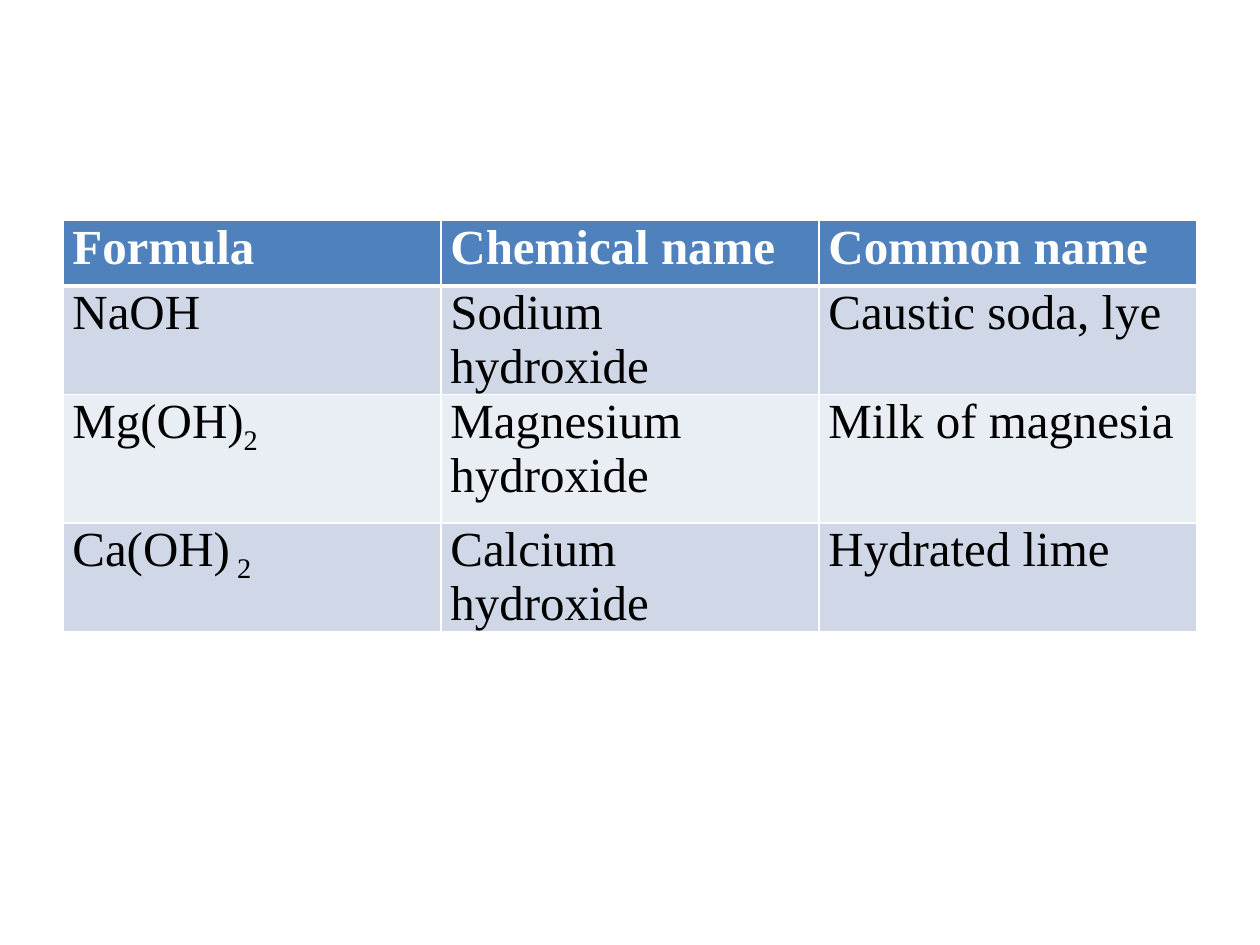
from lxml.etree import SubElement as Sub
from pptx import Presentation
from pptx.dml.color import RGBColor as RGB
from pptx.oxml.ns import qn
from pptx.util import Pt

HEADINGS = ["Formula", "Chemical name", "Common name"]
HYDROXIDES = [
    [("NaOH", ""), "Sodium hydroxide", "Caustic soda, lye"],
    [("Mg(OH)", "2"), "Magnesium hydroxide", "Milk of magnesia"],
    [("Ca(OH)", " 2"), "Calcium hydroxide", "Hydrated lime"],
]
COLORS = {
    "header": "4F81BD", "odd": "D0D8E8", "even": "E9EDF4",
    "rule": "FFFFFF", "header_text": "FFFFFF", "body_text": "000000",
}
ROW_HEIGHTS = [37.44, 37.44, 73.44, 37.44]
COLUMN_WIDTH = 216
LEFT, TOP = 36, 126
MARGINS = {"margin_left": Pt(5.4), "margin_right": Pt(5.4), "margin_top": 0, "margin_bottom": 0}


def set_borders(cell, widths):
    properties = cell._tc.get_or_add_tcPr()
    for side, width in widths.items():
        line = Sub(properties, qn(f"a:ln{side}"), w=str(Pt(width)))
        Sub(Sub(line, qn("a:solidFill")), qn("a:srgbClr"), val=COLORS["rule"])


def add_run(paragraph, text, font_format, color, baseline=0):
    run = paragraph.add_run()
    run.text = text
    for name, value in font_format.items():
        setattr(run.font, name, value)
    run.font.color.rgb = RGB.from_string(COLORS[color])
    if baseline:
        run._r.get_or_add_rPr().set("baseline", str(baseline))


def fill_cell(cell, content, row):
    is_header = row == 0
    for name, value in MARGINS.items():
        setattr(cell, name, value)
    set_borders(cell, {"L": 1, "R": 1, "T": 3 if row == 1 else 1, "B": 3 if is_header else 1})
    band = "header" if is_header else "odd" if row % 2 else "even"
    cell.fill.solid()
    cell.fill.fore_color.rgb = RGB.from_string(COLORS[band])
    font_format = {"name": "Times New Roman", "size": Pt(28), "bold": is_header}
    color = "header_text" if is_header else "body_text"
    base, subscript = content if isinstance(content, tuple) else (content, "")
    paragraph = cell.text_frame.paragraphs[0]
    add_run(paragraph, base, font_format, color)
    if subscript:
        add_run(paragraph, subscript, font_format, color, -25000)


def main():
    deck = Presentation()
    deck.slide_width, deck.slide_height = Pt(720), Pt(540)
    slide = deck.slides.add_slide(deck.slide_layouts[6])
    rows = [HEADINGS] + HYDROXIDES
    table = slide.shapes.add_table(
        len(rows), len(HEADINGS), Pt(LEFT), Pt(TOP),
        Pt(COLUMN_WIDTH * len(HEADINGS)), Pt(sum(ROW_HEIGHTS)),
    ).table
    for column in table.columns:
        column.width = Pt(COLUMN_WIDTH)
    for row, (contents, height) in enumerate(zip(rows, ROW_HEIGHTS)):
        table.rows[row].height = Pt(height)
        for column, content in enumerate(contents):
            fill_cell(table.cell(row, column), content, row)
    deck.save("out.pptx")


if __name__ == "__main__":
    main()
